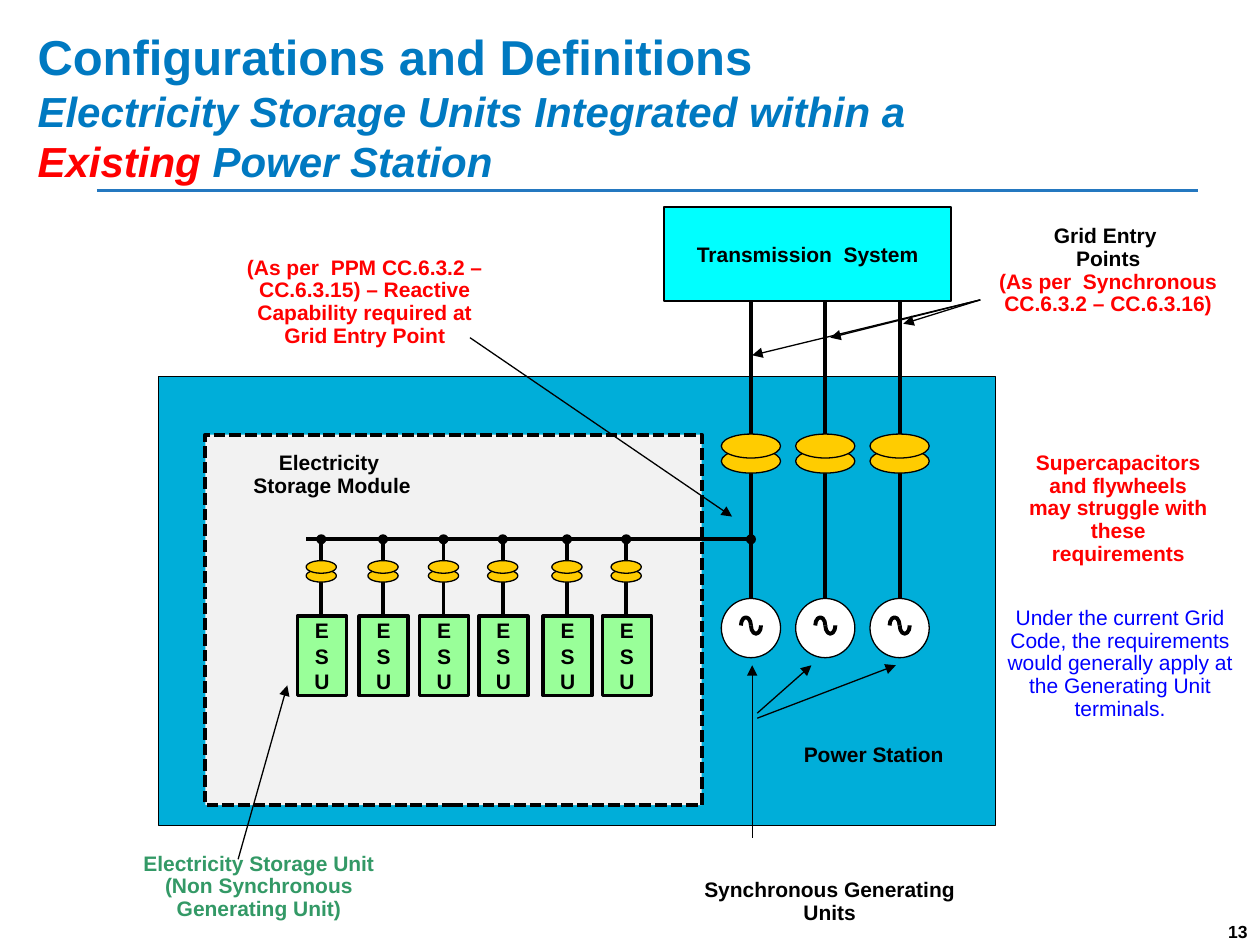
from lxml import etree
from pptx import Presentation
from pptx.dml import color
from pptx.enum import dml, shapes, text
from pptx.oxml import ns
from pptx.util import Inches, Pt

BLACK, RED, BLUE, GOLD = "000000", "FF0000", "0079C1", "FFCC00"
FEEDERS = [2.55, 3.04, 3.52, 3.99, 4.5, 4.97]
GENERATORS = [5.96 + 0.59 * i for i in range(3)]
BUSBAR = 4.28


def rgb(value):
    return color.RGBColor.from_string(value)


def style(run, size=12, ink=BLACK, bold=True, italic=False):
    run.font.name = "Arial"
    run.font.size = Pt(size)
    run.font.bold = bold
    run.font.italic = italic
    run.font.color.rgb = rgb(ink)


def draw_shape(slide, kind, box, fill=None, width=0.75):
    shape = slide.shapes.add_shape(kind, *map(Inches, box))
    shape.shadow.inherit = False
    if fill:
        shape.fill.solid()
        shape.fill.fore_color.rgb = rgb(fill)
    else:
        shape.fill.background()
    if width:
        shape.line.color.rgb = rgb(BLACK)
        shape.line.width = Pt(width)
    else:
        shape.line.fill.background()
    return shape


def draw_ellipse(slide, x, y, width, height, fill, outline=0.75):
    box = (x - width / 2, y - height / 2, width, height)
    return draw_shape(slide, shapes.MSO_SHAPE.OVAL, box, fill, outline)


def draw_line(slide, start, end, width=2.25, ink=BLACK, arrow=False):
    line = slide.shapes.add_connector(
        shapes.MSO_CONNECTOR.STRAIGHT, *map(Inches, (*start, *end)))
    line.line.color.rgb = rgb(ink)
    line.line.width = Pt(width)
    if arrow:
        head = etree.SubElement(line.line._get_or_add_ln(), ns.qn("a:tailEnd"))
        head.set("type", "triangle")
    etree.SubElement(line._element.spPr, ns.qn("a:effectLst"))


def draw_arrows(slide, arrows):
    for start, end in arrows:
        draw_line(slide, start, end, 0.75, arrow=True)


def draw_label(slide, box, *lines, ink=BLACK, bold=True):
    label = slide.shapes.add_textbox(*map(Inches, box))
    frame = label.text_frame
    frame.word_wrap = True
    frame.margin_left = frame.margin_right = 0
    frame.margin_top = frame.margin_bottom = 0
    frame.text = "\n".join(lines)
    for paragraph in frame.paragraphs:
        paragraph.alignment = text.PP_ALIGN.CENTER
        paragraph.line_spacing = 0.9
        style(paragraph.runs[0], ink=ink, bold=bold)
    return frame


def draw_block(slide, box, caption, fill, width):
    block = draw_shape(slide, shapes.MSO_SHAPE.RECTANGLE, box, fill, width)
    frame = block.text_frame
    frame.word_wrap = True
    frame.vertical_anchor = text.MSO_ANCHOR.MIDDLE
    frame.text = caption
    frame.paragraphs[0].alignment = text.PP_ALIGN.CENTER
    style(frame.paragraphs[0].runs[0])


def draw_heading(slide, box):
    heading = slide.shapes.add_textbox(*map(Inches, box)).text_frame
    heading.word_wrap = True
    heading.text = ("Configurations and Definitions\n"
                    "Electricity Storage Units Integrated within a\nExisting")
    title, subtitle, station = heading.paragraphs
    station.add_run().text = " Power Station"
    style(title.runs[0], 28, BLUE)
    style(subtitle.runs[0], 24, BLUE, italic=True)
    for run, ink in zip(station.runs, (RED, BLUE)):
        style(run, 24, ink, italic=True)
    left, top, width, height = box
    rule = top + height - 0.03
    draw_line(slide, (left + 0.57, rule), (left + width - 0.09, rule), 1.5, "2478C0")


def draw_page_number(slide, box):
    frame = slide.shapes.add_textbox(*map(Inches, box)).text_frame
    frame.word_wrap = True
    frame.text = "13"
    frame.paragraphs[0].alignment = text.PP_ALIGN.RIGHT
    style(frame.paragraphs[0].runs[0], 10)


def draw_transformer(slide, x, y, width, height, gap):
    for coil in (y + gap, y):
        draw_ellipse(slide, x, coil, width, height, GOLD)


def draw_generator(slide, x, top):
    rim = top + 2.41
    draw_line(slide, (x, rim), (x, top))
    draw_transformer(slide, x, top + 1.2, 0.47, 0.19, 0.12)
    draw_ellipse(slide, x, rim + 0.235, 0.47, 0.47, "FFFFFF")
    for left, flipped in ((x - 0.08, False), (x, True)):
        wave = draw_shape(slide, shapes.MSO_SHAPE.ARC,
                          (left, rim + 0.15, 0.08, 0.13), width=2.25)
        wave.adjustments[0] = 108.1
        wave.adjustments[1] = 1.44
        if flipped:
            wave._element.spPr.find(ns.qn("a:xfrm")).set("flipV", "1")


def draw_storage_unit(slide, x, top):
    draw_line(slide, (x, top), (x, top + 1.19))
    draw_transformer(slide, x, top + 0.22, 0.24, 0.1, 0.07)
    draw_block(slide, (x - 0.19, top + 0.61, 0.39, 0.63), "ESU", "99FF99", 2)


def draw_storage_module(slide, box):
    left, top, _, _ = box
    module = draw_shape(slide, shapes.MSO_SHAPE.RECTANGLE, box, "F2F2F2", 2.25)
    module.line.dash_style = dml.MSO_LINE.SQUARE_DOT
    for x in FEEDERS:
        draw_storage_unit(slide, x, BUSBAR)
    draw_label(slide, (left + 0.36, top + 0.14, 1.29, 0.36),
               "Electricity ", "Storage Module")


def draw_power_station(slide, box):
    left, top, _, _ = box
    draw_shape(slide, shapes.MSO_SHAPE.RECTANGLE, box, "00AED9")
    draw_storage_module(slide, (left + 0.37, top + 0.46, 3.94, 2.94))
    for x in GENERATORS:
        draw_generator(slide, x, top - 0.65)
    draw_line(slide, (GENERATORS[0], BUSBAR), (FEEDERS[0] - 0.12, BUSBAR))
    for x in FEEDERS + GENERATORS[:1]:
        draw_ellipse(slide, x, BUSBAR, 0.08, 0.08, BLACK, None)
    draw_label(slide, (left + 4.67, top + 2.92, 2.01, 0.21), "Power Station")


def draw_callouts(slide):
    draw_label(slide, (5.58, 6.98, 2.01, 0.6), "Synchronous Generating Units")
    draw_label(slide, (1.05, 6.77, 2.01, 0.6), "Electricity Storage Unit",
               "(Non Synchronous Generating Unit)", ink="339966")
    draw_label(slide, (1.89, 2.04, 2.01, 0.78),
               "(As per  PPM CC.6.3.2 – CC.6.3.15) – Reactive "
               "Capability required at Grid Entry Point", ink=RED)
    entry = draw_label(slide, (7.79, 1.79, 2.01, 0.91), "Grid Entry ", "Points",
                       "(As per  Synchronous CC.6.3.2 – CC.6.3.16)")
    style(entry.paragraphs[2].runs[0], ink=RED)
    draw_label(slide, (8.15, 3.59, 1.45, 1.07),
               "Supercapacitors and flywheels may struggle with these requirements",
               ink=RED)
    draw_label(slide, (7.95, 4.82, 1.88, 0.89),
               "Under the current Grid Code, the requirements would generally "
               "apply at the Generating Unit terminals.", ink="0000FF", bold=False)
    entry_points = [(5.97, 2.82), (6.59, 2.68), (7.17, 2.57)]
    draw_arrows(slide, [((7.78, 2.38), point) for point in entry_points] + [
        ((5.97, 6.65), (5.97, 5.28)),
        ((6.01, 5.66), (6.44, 5.28)),
        ((6.01, 5.7), (7.11, 5.28)),
        ((1.89, 6.82), (2.28, 5.44)),
        ((3.73, 2.68), (5.81, 4.1)),
    ])


def main():
    deck = Presentation()
    deck.slide_width, deck.slide_height = Inches(10), Inches(7.5)
    slide = deck.slides.add_slide(deck.slide_layouts[6])
    draw_heading(slide, (0.2, 0.16, 9.4, 1.38))
    draw_power_station(slide, (1.26, 2.99, 6.64, 3.56))
    draw_block(slide, (5.27, 1.64, 2.28, 0.75), "Transmission  System", "00FFFF", 1)
    draw_callouts(slide)
    draw_page_number(slide, (9.46, 7.26, 0.54, 0.24))
    deck.save("out.pptx")


if __name__ == "__main__":
    main()
